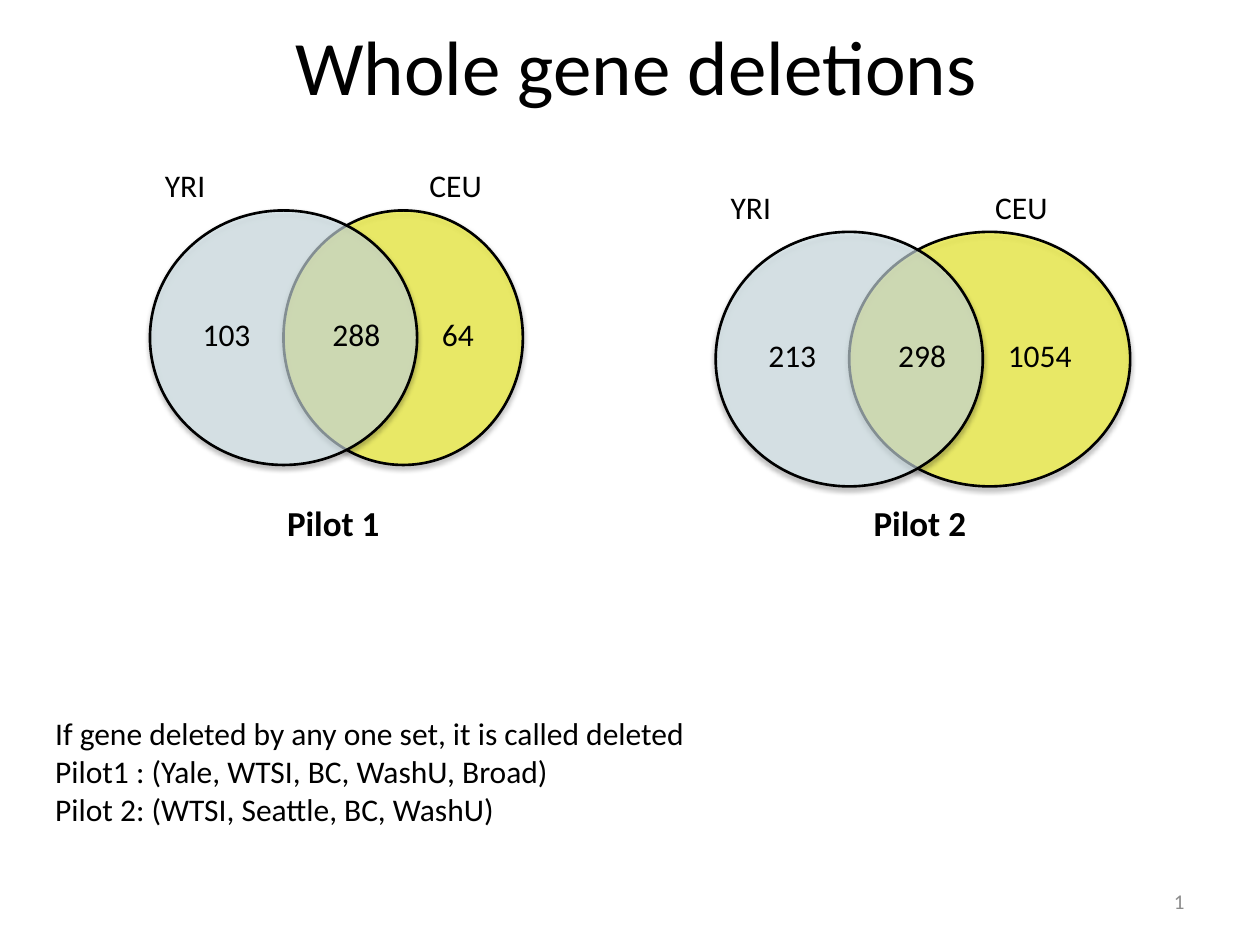
from lxml import etree
from pptx import Presentation
from pptx.dml.color import RGBColor
from pptx.enum.shapes import MSO_SHAPE
from pptx.enum.text import MSO_ANCHOR, PP_ALIGN
from pptx.oxml.ns import qn
from pptx.util import Inches, Pt

OVAL = MSO_SHAPE.OVAL
TOP, MIDDLE = MSO_ANCHOR.TOP, MSO_ANCHOR.MIDDLE
LEFT, CENTER, RIGHT = PP_ALIGN.LEFT, PP_ALIGN.CENTER, PP_ALIGN.RIGHT

FONT = "Calibri"
BLACK, GRAY = "000000", "8C8C8C"
YELLOW, BLUE = "FFFF00", "DBEEF4"

YRI_WIDTH = 2.12
CEU_OFFSET = 1.06
CAPTION_TOP = 3.93
CAPTION_WIDTH = 1.06


def color(hex_code):
    return RGBColor.from_string(hex_code)


def add_text(page, box, lines, size=18, bold=False, hex_code=BLACK,
             align=LEFT, anchor=TOP):
    frame = page.shapes.add_textbox(*map(Inches, box)).text_frame
    frame.word_wrap = True
    frame.vertical_anchor = anchor
    frame.text = "\n".join(lines)
    for para in frame.paragraphs:
        para.alignment = align
        para.font.name = FONT
        para.font.size = Pt(size)
        para.font.bold = bold
        para.font.color.rgb = color(hex_code)


def set_alpha(color_element, percent):
    etree.SubElement(color_element, qn("a:alpha"), val=str(percent * 1000))


def add_soft_shadow(shape):
    shape.shadow.inherit = False
    effects = shape._element.spPr.find(qn("a:effectLst"))
    shadow = etree.SubElement(
        effects, qn("a:outerShdw"), blurRad=str(Pt(3.1)), dist=str(Pt(1.8)),
        dir="5400000", rotWithShape="0")
    set_alpha(etree.SubElement(shadow, qn("a:srgbClr"), val=BLACK), 35)


def add_circle(page, box, fill, opacity):
    circle = page.shapes.add_shape(OVAL, *map(Inches, box))
    circle.fill.solid()
    circle.fill.fore_color.rgb = color(fill)
    fill_color = circle._element.spPr.find(qn("a:solidFill")).find(qn("a:srgbClr"))
    set_alpha(fill_color, opacity)
    circle.line.color.rgb = color(BLACK)
    circle.line.width = Pt(1.5)
    add_soft_shadow(circle)


def add_venn(page, box, counts, caption):
    """Draw two overlapping sets in box; counts are YRI only, shared, CEU only."""
    left, top, width, height = box
    add_circle(page, (left + CEU_OFFSET, top, width - CEU_OFFSET, height), YELLOW, 51)
    add_circle(page, (left, top, YRI_WIDTH, height), BLUE, 60)

    for name, offset, label_width in (("YRI", 0.02, 0.59), ("CEU", YRI_WIDTH, 0.81)):
        add_text(page, (left + offset, top - 0.4, label_width, 0.4), [name])
    for count, offset in zip(counts, (0.32, 1.35, 2.22)):
        add_text(page, (left + offset, top + 0.78, 0.74, 0.4), [str(count)])

    caption_left = left + (width - CAPTION_WIDTH) / 2 + 0.04
    add_text(page, (caption_left, CAPTION_TOP, CAPTION_WIDTH, 0.44), [caption],
             size=20, bold=True)


def add_title(page, box):
    add_text(page, box, ["Whole gene deletions"], size=44, align=CENTER, anchor=MIDDLE)


def add_explanation(page, box):
    add_text(page, box, [
        "If gene deleted by any one set, it is called deleted",
        "Pilot1 : (Yale, WTSI, BC, WashU, Broad)",
        "Pilot 2: (WTSI, Seattle, BC, WashU)",
    ])


def add_page_number(page, box):
    add_text(page, box, ["1"], size=12, hex_code=GRAY, align=RIGHT, anchor=MIDDLE)


def main():
    deck = Presentation()
    deck.slide_width, deck.slide_height = Inches(10), Inches(7.5)
    page = deck.slides.add_slide(deck.slide_layouts[6])
    add_title(page, (1.81, 0.02, 6.48, 0.98))
    add_venn(page, (1.19, 1.67, 2.96, 2.02), (103, 288, 64), "Pilot 1")
    add_venn(page, (5.68, 1.84, 3.29, 2.02), (213, 298, 1054), "Pilot 2")
    add_explanation(page, (0.34, 5.62, 8.3, 1.01))
    add_page_number(page, (7.17, 6.95, 2.33, 0.4))
    deck.save("out.pptx")


if __name__ == "__main__":
    main()
